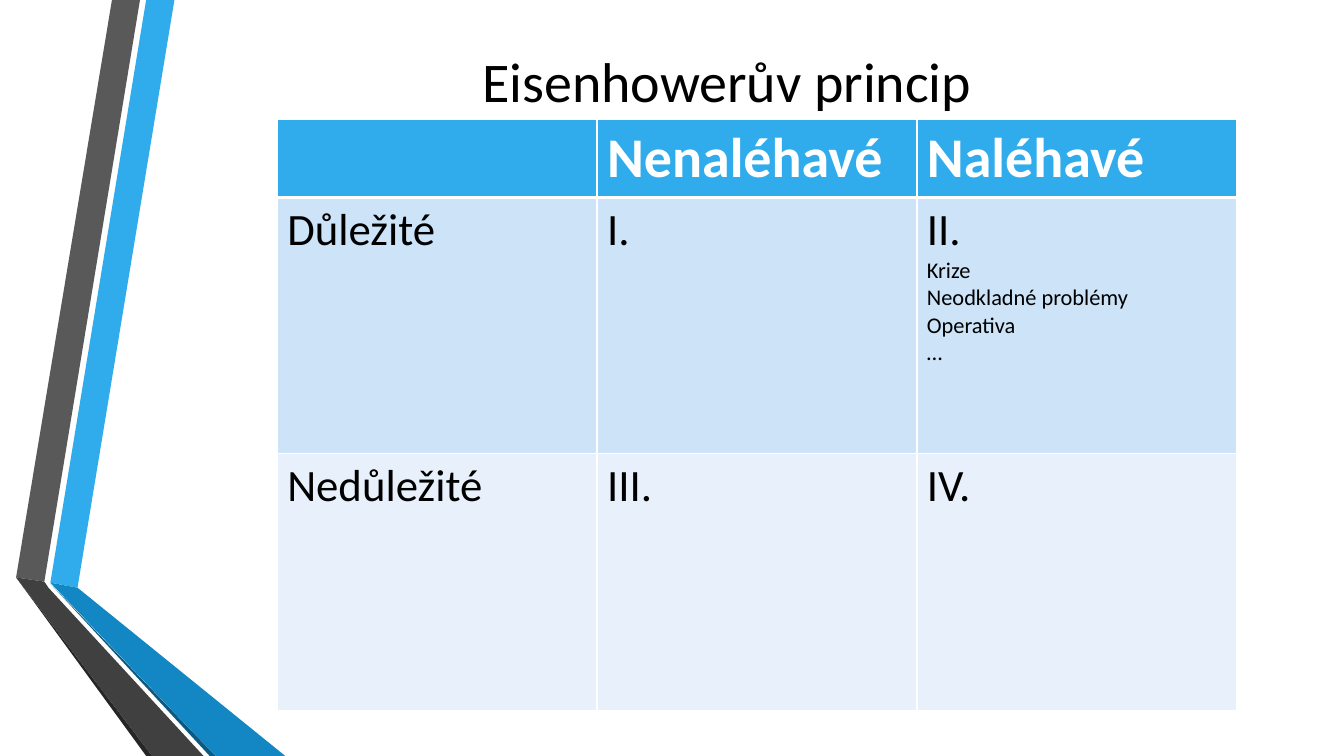
from lxml.etree import SubElement as Sub
from pptx import Presentation
from pptx.dml.color import RGBColor as RGB
from pptx.enum.text import MSO_ANCHOR as Anchor, PP_ALIGN as Align
from pptx.oxml.ns import qn
from pptx.util import Pt

FONT = "Calibri"
COLORS = {
    "white": "FFFFFF", "black": "000000",
    "sky": "30ACEC", "blue": "1287C3", "navy": "0C5A82",
    "gray": "595959", "coal": "404040", "dark": "262626",
    "mid": "CDE3F8", "pale": "E8F1FB",
}

# Ribbon pieces, back to front: colour and corners in points
RIBBON = [
    ("sky", [(36, 416.2), (55.4, 419.8), (124.6, 0), (104.4, 0)]),
    ("gray", [(100, 0), (80, 0), (11.5, 412.5), (31.7, 415.5)]),
    ("dark", [(11.5, 412.5), (104.4, 540), (108.7, 540)]),
    ("navy", [(36, 416.9), (149.8, 540), (154, 540)]),
    ("blue", [(36, 416.2), (154, 540), (203.8, 540), (55.4, 419.8)]),
    ("coal", [(145.4, 540), (34.6, 419.8), (31.7, 415.5), (11.5, 412.5),
              (108.7, 540)]),
]

# Table rows: height, fill and cell texts
ROWS = [
    (56, "sky", ["", "Nenaléhavé", "Naléhavé"]),
    (183.2, "mid", ["Důležité", "I.",
                    "II.\nKrize\nNeodkladné problémy\nOperativa\n…"]),
    (183.2, "pale", ["Nedůležité", "III.", "IV."]),
]


def paint(fill, color):
    fill.solid()
    fill.fore_color.rgb = RGB.from_string(COLORS[color])


def style(para, size, color="black", bold=False):
    for run in para.runs:
        font = run.font
        font.name, font.size, font.bold = FONT, Pt(size), bold
        font.color.rgb = RGB.from_string(COLORS[color])


def add_piece(slide, color, points):
    corners = [(Pt(x), Pt(y)) for x, y in points]
    pen = slide.shapes.build_freeform(*corners[0])
    pen.add_line_segments(corners[1:])
    piece = pen.convert_to_shape()
    piece.shadow.inherit = False
    paint(piece.fill, color)
    piece.line.fill.background()


def add_title(slide, text):
    box = slide.shapes.add_textbox(Pt(124.6), Pt(15.8), Pt(789), Pt(83.5))
    frame = box.text_frame
    frame.word_wrap = True
    frame.vertical_anchor = Anchor.MIDDLE
    frame.text = text
    para = frame.paragraphs[0]
    para.alignment = Align.CENTER
    style(para, 40)


def add_edge(cell, side, width):
    props = cell._tc.get_or_add_tcPr()
    edge = Sub(props, qn("a:ln" + side), w=str(Pt(width)))
    fill = Sub(edge, qn("a:solidFill"))
    Sub(fill, qn("a:srgbClr"), val=COLORS["white"])


def fill_cell(cell, text, color, row, col):
    # Borders come before the fill; the rule under the header is thicker
    thick = {(0, "B"), (1, "T")}
    for side in "LRTB":
        add_edge(cell, side, 3 if (row, side) in thick else 1)
    paint(cell.fill, color)
    cell.text_frame.text = text
    for num, para in enumerate(cell.text_frame.paragraphs):
        if row == 0:
            style(para, 40, "white", True)
        else:
            style(para, 16 if num else 32)
            if col == 0:
                para.space_before = para.space_after = Pt(18)


def add_grid(slide):
    high = sum(row[0] for row in ROWS)
    frame = slide.shapes.add_table(3, 3, Pt(198), Pt(85), Pt(685.5), Pt(high))
    table = frame.table
    for row, (height, color, texts) in enumerate(ROWS):
        table.rows[row].height = Pt(height)
        for col, text in enumerate(texts):
            fill_cell(table.cell(row, col), text, color, row, col)


def main():
    deck = Presentation()
    deck.slide_width, deck.slide_height = Pt(960), Pt(540)
    slide = deck.slides.add_slide(deck.slide_layouts[6])
    paint(slide.background.fill, "white")

    # Ribbon on the left
    for color, points in RIBBON:
        add_piece(slide, color, points)

    # Title and matrix
    add_title(slide, "Eisenhowerův princip")
    add_grid(slide)
    deck.save("out.pptx")


if __name__ == "__main__":
    main()
